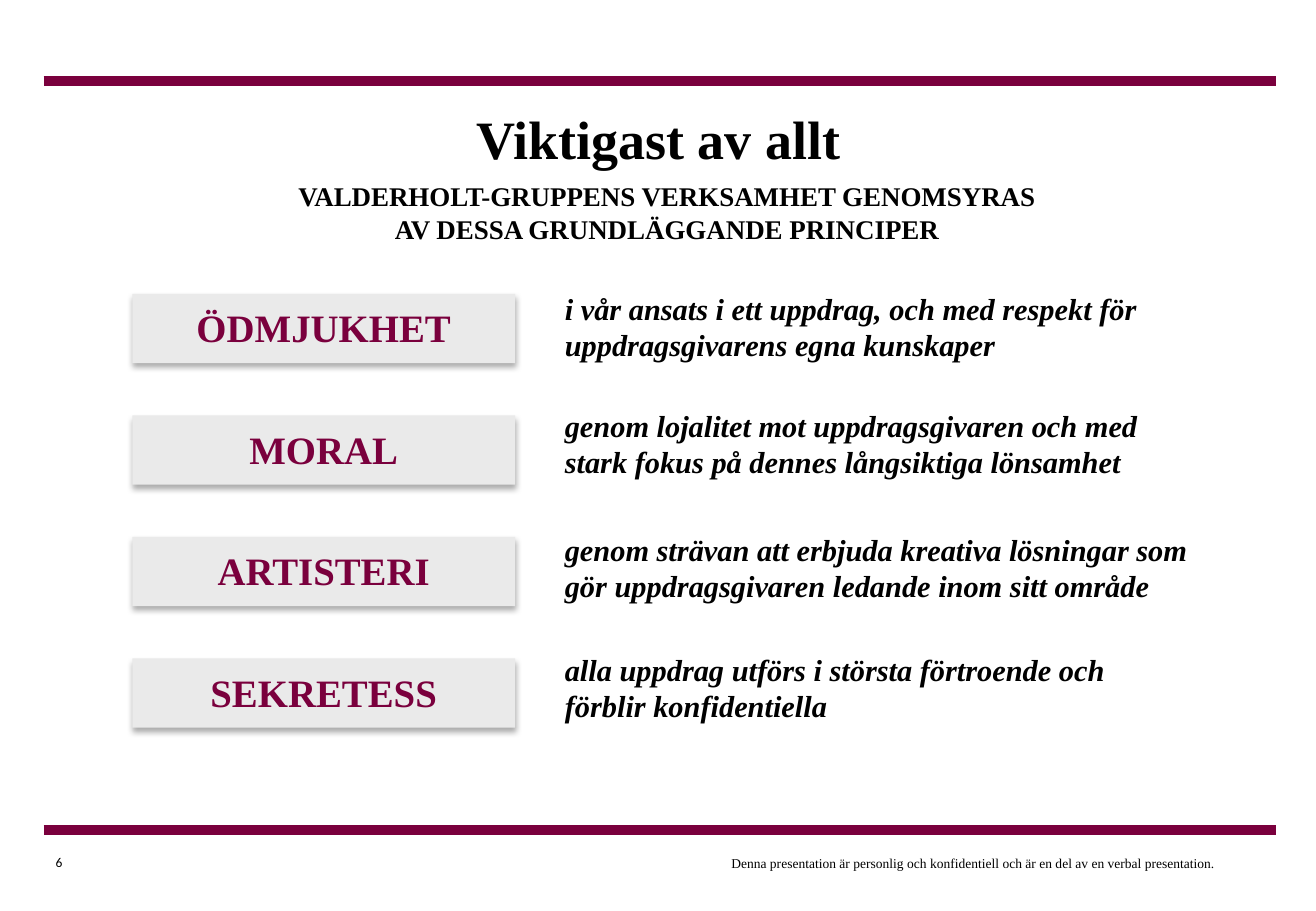
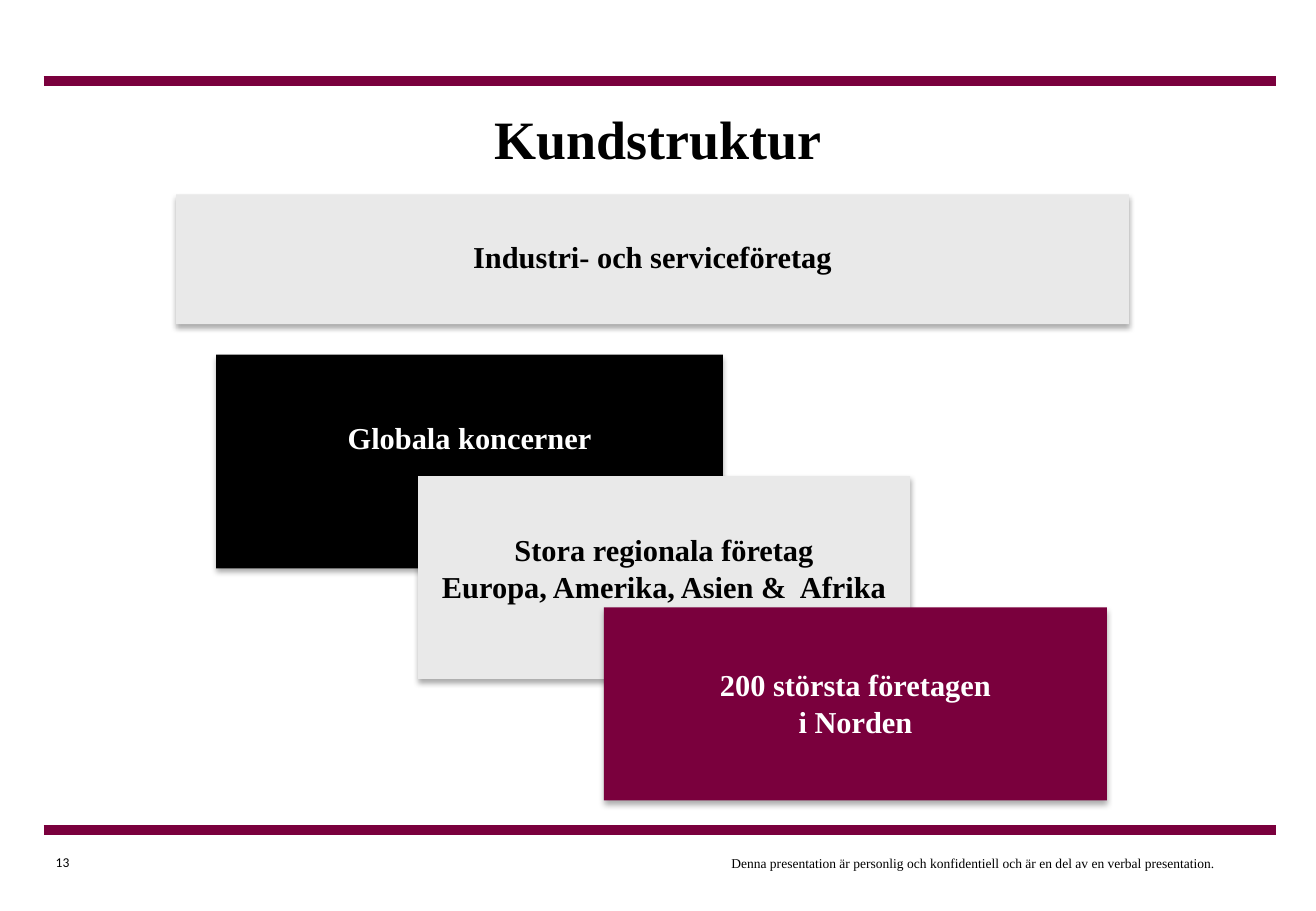
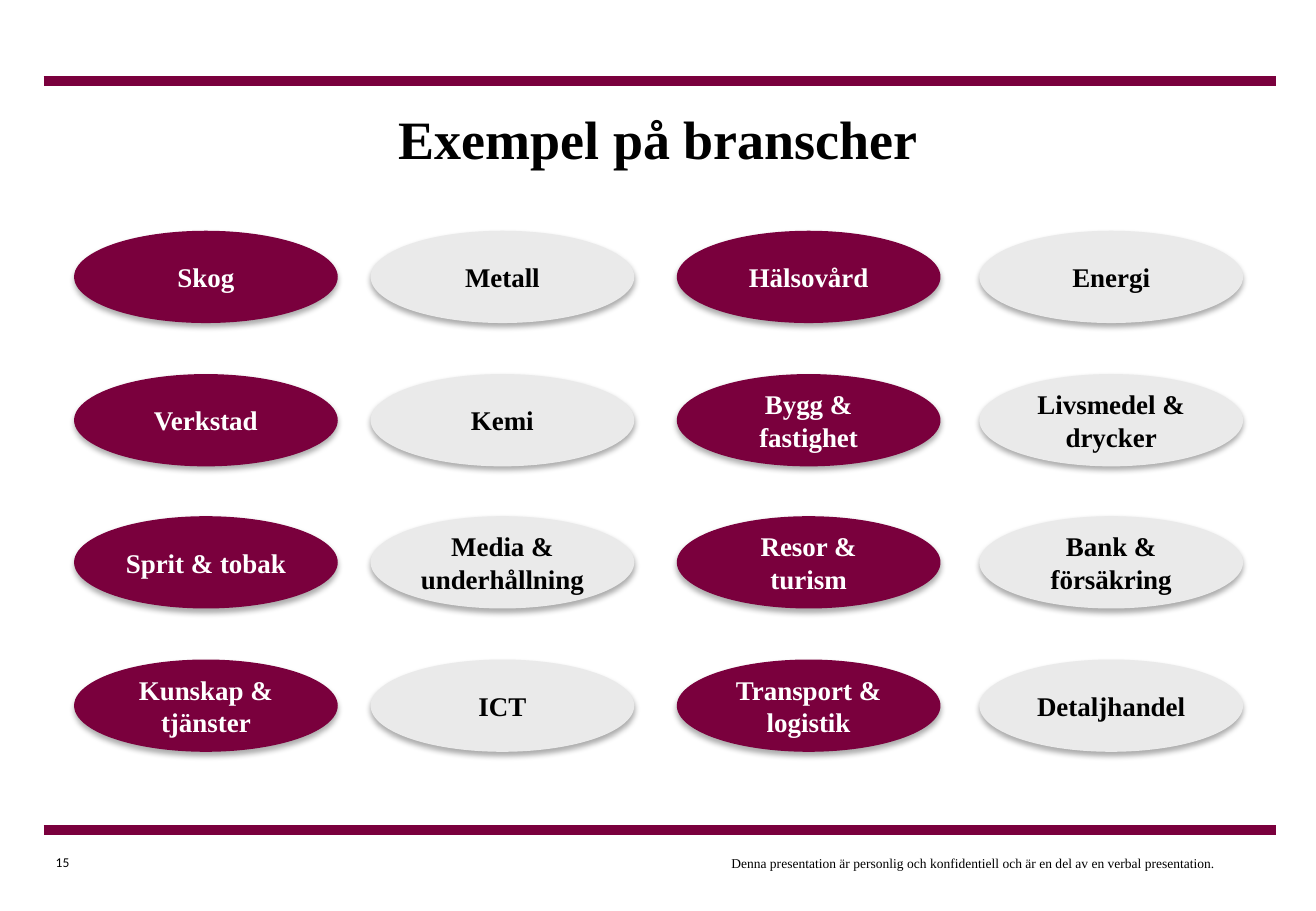
from lxml.etree import SubElement
from pptx import Presentation
from pptx.dml.color import RGBColor
from pptx.enum.shapes import MSO_CONNECTOR, MSO_SHAPE
from pptx.enum.text import MSO_ANCHOR, PP_ALIGN
from pptx.oxml.ns import qn
from pptx.util import Pt

PX = 9144
WIDE, HIGH = 1083, 750
WINE, BLACK, WHITE = "7A003D", "000000", "FFFFFF"
GREY, PALE = "EAEAEA", "E9E9E9"
SERIF, SANS = "Times New Roman", "Calibri"
BARS = (67, 683)
FOOT = "Denna presentation är personlig och konfidentiell och är en del av en verbal presentation."

LEAD = "VALDERHOLT-GRUPPENS VERKSAMHET GENOMSYRAS\nAV DESSA GRUNDLÄGGANDE PRINCIPER"
VALUES = [
    ("ÖDMJUKHET", 234, "i vår ansats i ett uppdrag, och med respekt för\nuppdragsgivarens egna kunskaper"),
    ("MORAL", 330, "genom lojalitet mot uppdragsgivaren och med\nstark fokus på dennes långsiktiga lönsamhet"),
    ("ARTISTERI", 432, "genom strävan att erbjuda kreativa lösningar som\ngör uppdragsgivaren ledande inom sitt område"),
    ("SEKRETESS", 531, "alla uppdrag utförs i största förtroende och\nförblir konfidentiella"),
]
CLIENTS = [
    ("Industri- och serviceföretag", (145, 160, 784, 107), PALE, BLACK, 2),
    ("Globala koncerner", (178, 292, 417, 176), BLACK, WHITE, 20),
    ("Stora regionala företag\nEuropa, Amerika, Asien &  Afrika", (344, 392, 405, 167), PALE, BLACK, 8),
    ("200 största företagen\ni Norden", (497, 500, 414, 159), WINE, WHITE, 1),
]
FIELDS = [
    (61, ["Skog", "Verkstad", "Sprit & tobak", "Kunskap &\ntjänster"]),
    (305, ["Metall", "Kemi", "Media &\nunderhållning", "ICT"]),
    (557, ["Hälsovård", "Bygg &\nfastighet", "Resor &\nturism", "Transport &\nlogistik"]),
    (806, ["Energi", "Livsmedel &\ndrycker", "Bank &\nförsäkring", "Detaljhandel"]),
]


def px(*nums):
    return [n * PX for n in nums]


def color(code):
    return RGBColor.from_string(code)


def write(shape, text, size, ink=BLACK, bold=True, slant=False,
          align=PP_ALIGN.CENTER, face=SERIF, pad=(10, 5)):
    frame = shape.text_frame
    frame.text = text
    frame.margin_left = frame.margin_right = pad[0] * PX
    frame.margin_top = frame.margin_bottom = pad[1] * PX
    for para in frame.paragraphs:
        para.alignment = align
        for run in para.runs:
            font = run.font
            font.name, font.size = face, Pt(size)
            font.bold, font.italic = bold, slant
            font.color.rgb = color(ink)
    return frame


def label(slide, box, text, size, **look):
    shape = slide.shapes.add_textbox(*px(*box))
    frame = write(shape, text, size, **look)
    frame.word_wrap = True
    return frame


def block(slide, kind, box, fill, text, size, ink, lift=0):
    shape = slide.shapes.add_shape(kind, *px(*box))
    shape.fill.solid()
    shape.fill.fore_color.rgb = color(fill)
    shape.line.fill.background()
    shape.shadow.inherit = False
    effects = shape.element.spPr.find(qn("a:effectLst"))
    shade = SubElement(effects, qn("a:outerShdw"), blurRad=str(Pt(3.5)),
                       dist=str(Pt(2.2)), dir="5400000", rotWithShape="0")
    tone = SubElement(shade, qn("a:srgbClr"), val=BLACK)
    SubElement(tone, qn("a:alpha"), val="32000")
    frame = write(shape, text, size, ink, pad=(0, 0))
    frame.word_wrap = False
    frame.vertical_anchor = MSO_ANCHOR.MIDDLE
    frame.margin_bottom = 2 * lift * PX


def page(deck, title, number):
    slide = deck.slides.add_slide(deck.slide_layouts[6])
    for y in BARS:
        bar = slide.shapes.add_connector(MSO_CONNECTOR.STRAIGHT, *px(36, y, 1050, y))
        bar.line.color.rgb = color(WINE)
        bar.line.width = Pt(6)
        SubElement(bar.element.spPr, qn("a:effectLst"))
    label(slide, (36, 81, 1012, 64), title, 32, pad=(11, 6))
    for box, text, face in (((592, 686, 456, 50), FOOT, SERIF),
                            ((36, 685, 225, 50), str(number), SANS)):
        frame = label(slide, box, text, 8, bold=False, align=PP_ALIGN.LEFT, face=face)
        frame.vertical_anchor = MSO_ANCHOR.MIDDLE
    return slide


def values(deck):
    slide = page(deck, "Viktigast av allt", 6)
    label(slide, (199, 142, 700, 65), LEAD, 16, pad=(11, 6))
    for row, (name, top, text) in enumerate(VALUES):
        block(slide, MSO_SHAPE.RECTANGLE, (109, 242 + 100 * row, 315, 57),
              GREY, name, 23, WINE, 1)
        label(slide, (455, top, 580, 70), text, 18, slant=True, align=PP_ALIGN.LEFT)


def clients(deck):
    slide = page(deck, "Kundstruktur", 13)
    for text, box, fill, ink, lift in CLIENTS:
        block(slide, MSO_SHAPE.RECTANGLE, box, fill, text, 18, ink, lift)


def fields(deck):
    slide = page(deck, "Exempel på branscher", 15)
    for col, (left, names) in enumerate(FIELDS):
        fill, ink = ((WINE, WHITE), (GREY, BLACK))[col % 2]
        for row, name in enumerate(names):
            top = 190 + round(353 * row / 3)
            block(slide, MSO_SHAPE.OVAL, (left, top, 217, 76), fill, name, 16, ink)


def main():
    deck = Presentation()
    deck.slide_width, deck.slide_height = px(WIDE, HIGH)
    for build in (values, clients, fields):
        build(deck)
    deck.save("out.pptx")


if __name__ == "__main__":
    main()
